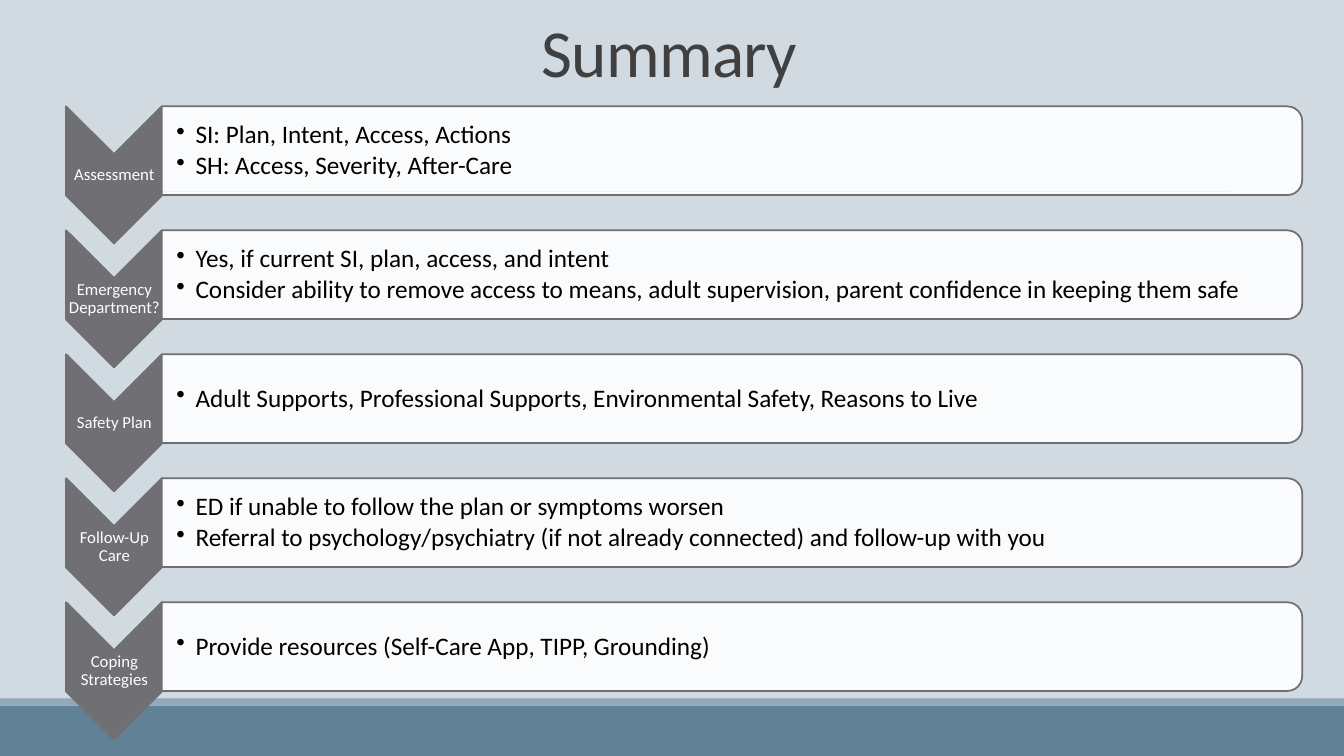
from dataclasses import dataclass

from lxml.etree import SubElement
from pptx import Presentation
from pptx.dml.color import RGBColor as Rgb
from pptx.enum.shapes import MSO_CONNECTOR as Wire, MSO_SHAPE as Kind
from pptx.enum.text import MSO_ANCHOR as Anchor, PP_ALIGN as Align
from pptx.oxml.ns import qn
from pptx.util import Inches, Pt


@dataclass(frozen=True)
class Theme:
    """Colours, font and type sizes of the slide."""
    back: str = "D1D9E1"
    band: str = "618197"
    trim: str = "92A9B9"
    rule: str = "808080"
    title: str = "404040"
    gray: str = "6F6F74"
    white: str = "FFFFFF"
    black: str = "000000"
    font: str = "Calibri"
    head: int = 48
    body: int = 18
    label: int = 12


THEME = Theme()
TOP, STEP = 1.5, 1.23
ROWS = [
    ("Assessment", ["SI: Plan, Intent, Access, Actions",
                    "SH: Access, Severity, After-Care"]),
    ("Emergency Department?", [
        "Yes, if current SI, plan, access, and intent",
        "Consider ability to remove access to means, adult supervision, "
        "parent confidence in keeping them safe"]),
    ("Safety Plan", ["Adult Supports, Professional Supports, "
                     "Environmental Safety, Reasons to Live"]),
    ("Follow-Up Care", [
        "ED if unable to follow the plan or symptoms worsen",
        "Referral to psychology/psychiatry (if not already connected) "
        "and follow-up with you"]),
    ("Coping Strategies", ["Provide resources (Self-Care App, TIPP, Grounding)"]),
]


def add_form(slide, kind, box, fill, line=None, turn=0):
    """Add a filled preset shape, outlined if a line colour is given."""
    form = slide.shapes.add_shape(kind, *map(Inches, box))
    form.shadow.inherit = False
    form.rotation = turn
    form.fill.solid()
    form.fill.fore_color.rgb = Rgb.from_string(fill)
    if line:
        form.line.color.rgb = Rgb.from_string(line)
        form.line.width = Pt(1.25)
    else:
        form.line.fill.background()
    return form


def add_rule(slide, left, right, y):
    """Add a thin level line."""
    rule = slide.shapes.add_connector(
        Wire.STRAIGHT, Inches(left), Inches(y), Inches(right), Inches(y))
    rule.line.color.rgb = Rgb.from_string(THEME.rule)
    rule.line.width = Pt(0.5)
    SubElement(rule._element.spPr, qn("a:effectLst"))


def add_text(slide, box, lines, size, color, anchor=Anchor.MIDDLE,
             align=Align.CENTER, pad=0.01, lead=0.9, after=0):
    """Add a wrapped text box and return its paragraphs."""
    frame = slide.shapes.add_textbox(*map(Inches, box)).text_frame
    frame.word_wrap = True
    frame.vertical_anchor = anchor
    frame.margin_left = Inches(pad)
    frame.margin_right = frame.margin_top = frame.margin_bottom = Inches(0.01)
    frame.text = "\n".join(lines)
    for para in frame.paragraphs:
        para.alignment = align
        para.line_spacing = lead
        para.space_after = Pt(after)
        para.font.name = THEME.font
        para.font.size = Pt(size)
        para.font.color.rgb = Rgb.from_string(color)
    return frame.paragraphs


def add_dot(para):
    """Give a paragraph a hanging round bullet."""
    props = para._p.get_or_add_pPr()
    props.set("marL", str(Inches(0.19)))
    props.set("indent", str(-Inches(0.19)))
    dot = props.makeelement(qn("a:buChar"), {"char": "•"})
    props.find(qn("a:defRPr")).addprevious(dot)


def add_title(slide):
    """Add the slide title."""
    para, = add_text(slide, (1.14, 0, 11, 0.91), ["Summary"], THEME.head,
                     THEME.title, anchor=Anchor.BOTTOM, lead=0.85)
    para.runs[0]._r.get_or_add_rPr().set("spc", "-50")


def add_row(slide, mid, label, points):
    """Add a chevron with its label and the panel of points beside it."""
    add_form(slide, Kind.CHEVRON, (0.45, mid - 0.24, 1.36, 0.95),
             THEME.gray, THEME.gray, 90)
    add_text(slide, (0.66, mid + 0.03, 0.95, 0.41), [label],
             THEME.label, THEME.white, after=4.2)
    panel = add_form(slide, Kind.ROUND_2_SAME_RECTANGLE,
                     (6.82, mid - 5.66, 0.88, 11.31),
                     THEME.white, THEME.gray, 90)
    tint = panel._element.spPr.find(qn("a:solidFill"))[0]
    SubElement(tint, qn("a:alpha"), val="90000")
    for para in add_text(slide, (1.61, mid - 0.4, 11.27, 0.8), points,
                         THEME.body, THEME.black, align=Align.LEFT,
                         pad=0.14, after=2.7):
        add_dot(para)


def main():
    """Build and save the summary slide."""
    deck = Presentation()
    deck.slide_width, deck.slide_height = Inches(13.33), Inches(7.5)
    slide = deck.slides.add_slide(deck.slide_layouts[6])
    slide.background.fill.solid()
    slide.background.fill.fore_color.rgb = Rgb.from_string(THEME.back)
    add_form(slide, Kind.RECTANGLE, (0, 7, 13.33, 0.5), THEME.band)
    add_form(slide, Kind.RECTANGLE, (0, 6.93, 13.33, 0.07), THEME.trim)
    add_rule(slide, 1.31, 12.21, 1.9)
    add_title(slide)
    for i, (label, points) in enumerate(ROWS):
        add_row(slide, TOP + i * STEP, label, points)
    deck.save("out.pptx")


if __name__ == "__main__":
    main()
